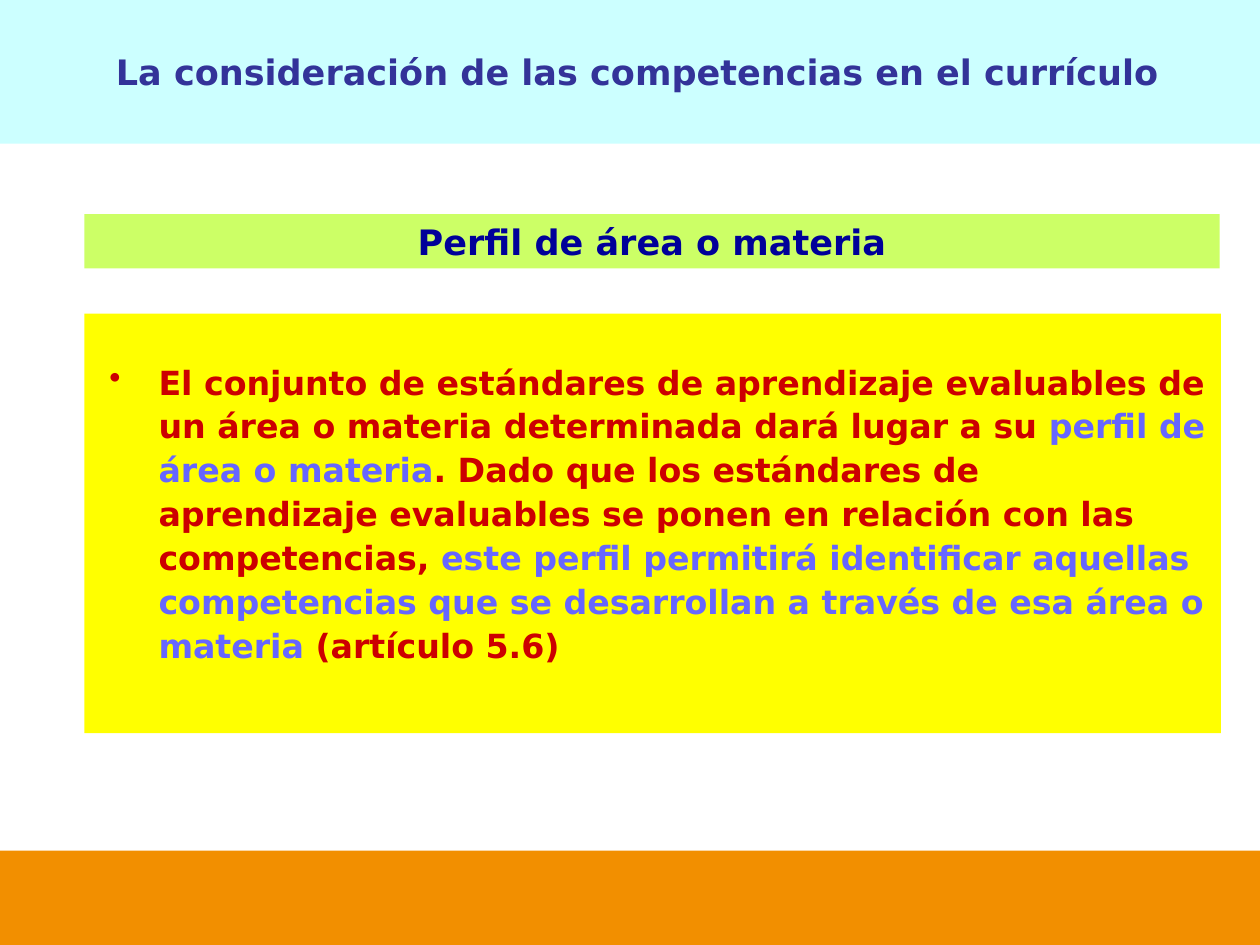
from dataclasses import dataclass

from lxml.etree import SubElement
from pptx import Presentation
from pptx.dml.color import RGBColor
from pptx.enum.shapes import MSO_SHAPE
from pptx.enum.text import MSO_ANCHOR, PP_ALIGN
from pptx.oxml.ns import qn
from pptx.util import Inches, Pt


@dataclass(frozen=True)
class Theme:
    font: str = "DejaVu Sans"
    header: str = "CCFFFF"
    footer: str = "F28F00"
    subtitle_fill: str = "CCFF66"
    body_fill: str = "FFFF00"
    title: str = "333399"
    subtitle: str = "000099"
    body: str = "CC0000"
    emphasis: str = "6666FF"
    heading_size: int = 20
    body_size: int = 19


THEME = Theme()

PROFILE = [
    ("El conjunto de estándares de aprendizaje evaluables de un área o materia "
     "determinada dará lugar a su ", THEME.body),
    ("perfil de área o materia", THEME.emphasis),
    (". Dado que los estándares de aprendizaje evaluables se ponen en relación "
     "con las competencias, ", THEME.body),
    ("este perfil permitirá identificar aquellas competencias que se desarrollan "
     "a través de esa área o materia", THEME.emphasis),
    (" (artículo 5.6)", THEME.body),
]


def paint(shape, color):
    shape.fill.solid()
    shape.fill.fore_color.rgb = RGBColor.from_string(color)


def add_band(slide, left, top, width, height, color):
    band = slide.shapes.add_shape(
        MSO_SHAPE.RECTANGLE, Inches(left), Inches(top), Inches(width), Inches(height))
    paint(band, color)
    band.line.fill.background()
    band.shadow.inherit = False
    return band


def format_run(run, size, color):
    run.font.name = THEME.font
    run.font.size = Pt(size)
    run.font.bold = True
    run.font.color.rgb = RGBColor.from_string(color)


def write_heading(shape, text, color):
    frame = shape.text_frame
    frame.text = text
    frame.word_wrap = True
    frame.vertical_anchor = MSO_ANCHOR.MIDDLE
    heading = frame.paragraphs[0]
    heading.alignment = PP_ALIGN.CENTER
    format_run(heading.runs[0], THEME.heading_size, color)


def place_title(slide, text):
    title = slide.shapes.title
    title.left, title.top = Inches(0), Inches(0)
    title.width, title.height = Inches(10), Inches(1.14)
    paint(title, THEME.header)
    write_heading(title, text, THEME.title)
    title.text_frame.margin_left = Inches(0.22)


def add_bullet(paragraph, indent, hanging):
    properties = paragraph._p.get_or_add_pPr()
    properties.set("marL", str(Inches(indent)))
    properties.set("indent", str(-Inches(hanging)))
    SubElement(properties, qn("a:buChar"), char="•")


def write_profile(panel, passages):
    frame = panel.text_frame
    frame.word_wrap = True
    frame.vertical_anchor = MSO_ANCHOR.TOP
    frame.margin_top = Inches(0.35)
    profile = frame.paragraphs[0]
    profile.alignment = PP_ALIGN.LEFT
    profile.line_spacing = 1.1
    add_bullet(profile, 0.49, 0.39)
    for text, color in passages:
        passage = profile.add_run()
        passage.text = text
        format_run(passage, THEME.body_size, color)


def main():
    presentation = Presentation()
    presentation.slide_width = Inches(10)
    presentation.slide_height = Inches(7.5)
    slide = presentation.slides.add_slide(presentation.slide_layouts[5])

    place_title(slide, "La consideración de las competencias en el currículo")
    add_band(slide, 0, 6.75, 10, 0.75, THEME.footer)
    profile_panel = add_band(slide, 0.67, 2.49, 9.02, 3.33, THEME.body_fill)
    write_profile(profile_panel, PROFILE)
    subtitle_band = add_band(slide, 0.67, 1.7, 9.01, 0.43, THEME.subtitle_fill)
    write_heading(subtitle_band, "Perfil de área o materia", THEME.subtitle)

    presentation.save("out.pptx")


if __name__ == "__main__":
    main()
